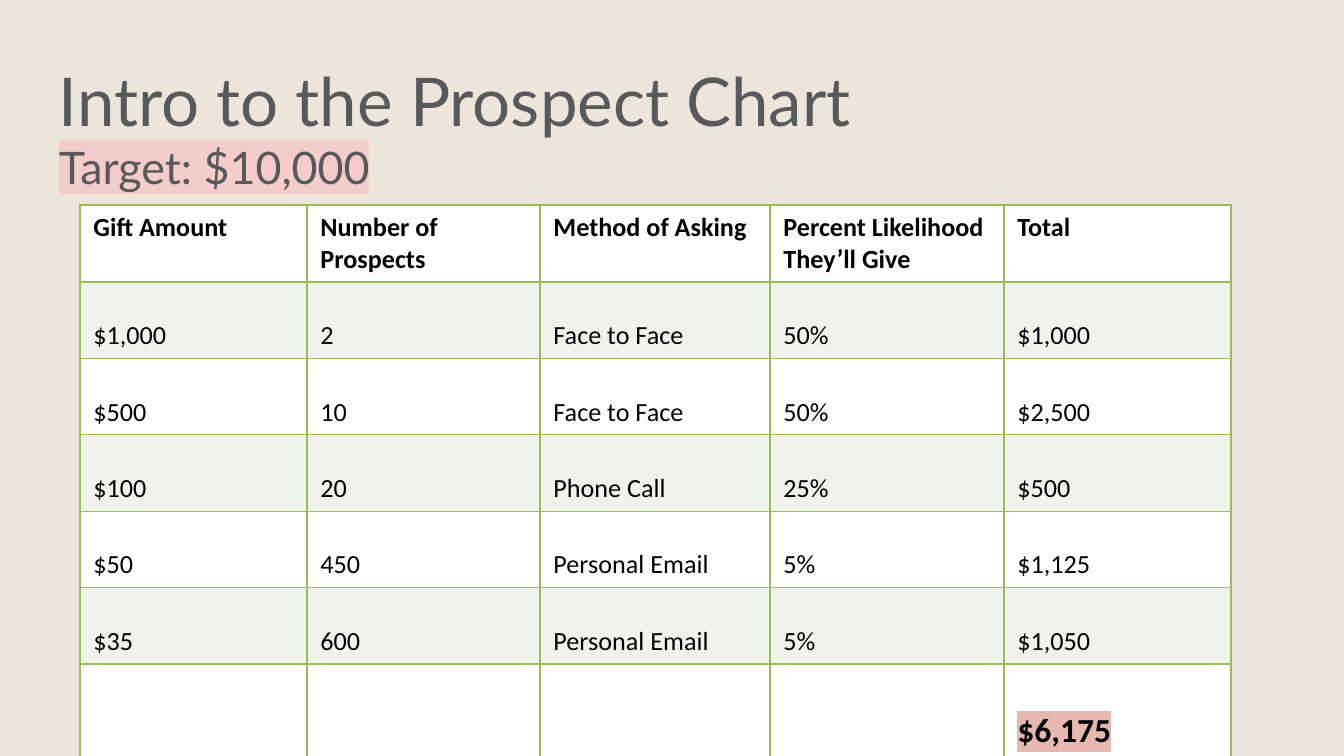
import pptx
import pptx.dml.color
import pptx.enum.text
import pptx.oxml
import pptx.oxml.ns
import pptx.util

TITLE = [
    ("Intro to the Prospect Chart", dict(size=36)),
    ("Target: $10,000", dict(size=24, highlight="F4CCCC")),
]
HEADER = ["Gift Amount", "Number of Prospects", "Method of Asking",
          "Percent Likelihood They’ll Give", "Total"]
GIFTS = [
    ["$1,000", "2", "Face to Face", "50%", "$1,000"],
    ["$500", "10", "Face to Face", "50%", "$2,500"],
    ["$100", "20", "Phone Call", "25%", "$500"],
    ["$50", "450", "Personal Email", "5%", "$1,125"],
    ["$35", "600", "Personal Email", "5%", "$1,050"],
]
GRAND_TOTAL = ["", "", "", "", "$6,175"]
COLUMNS = [227, 233, 230, 234, 227]
ROW_HEIGHT = 70
GREEN, WHITE, BAND = "9BBB59", "FFFFFF", "EFF3EA"


def px(n):
    return round(n * 914400 / 134.4)


def rgb(value):
    return pptx.dml.color.RGBColor.from_string(value)


def element(xml):
    return pptx.oxml.parse_xml(xml.replace(">", f" {pptx.oxml.ns.nsdecls('a')}>", 1))


def write(p, text, size=14, font="Calibri", color="000000", bold=False,
          highlight=None, spacing=None):
    p.alignment = pptx.enum.text.PP_ALIGN.LEFT
    if spacing:
        p.line_spacing = spacing
    r = p.add_run()
    r.text = text
    r.font.size = pptx.util.Pt(size)
    r.font.name = font
    r.font.bold = bold
    r.font.color.rgb = rgb(color)
    if highlight:
        fill = r.font._element.find(pptx.oxml.ns.qn("a:solidFill"))
        fill.addnext(element(
            f'<a:highlight><a:srgbClr val="{highlight}"/></a:highlight>'))


def set_borders(cell, top, bottom):
    """Draw the four sides; top and bottom are widths in points."""
    tcPr = cell._tc.get_or_add_tcPr()
    sides = [("L", 0.75), ("R", 0.75), ("T", top), ("B", bottom)]
    for i, (side, width) in enumerate(sides):
        tcPr.insert(i, element(
            f'<a:ln{side} w="{pptx.util.Pt(width)}"><a:solidFill>'
            f'<a:srgbClr val="{GREEN}"/></a:solidFill></a:ln{side}>'))


prs = pptx.Presentation()
prs.slide_width, prs.slide_height = px(1344), px(756)
s = prs.slides.add_slide(prs.slide_layouts[5])
s.background.fill.solid()
s.background.fill.fore_color.rgb = rgb("EBE5DB")

title = s.shapes.title
title.left, title.top, title.width, title.height = px(46), px(46), px(1253), px(85)
tf = title.text_frame
tf.word_wrap = True
tf.auto_size = pptx.enum.text.MSO_AUTO_SIZE.NONE
tf.vertical_anchor = pptx.enum.text.MSO_ANCHOR.TOP
tf.margin_left = tf.margin_right = tf.margin_top = tf.margin_bottom = px(13)
for i, (text, style) in enumerate(TITLE):
    p = tf.add_paragraph() if i else tf.paragraphs[0]
    write(p, text, font="Lato", color="595959", **style)

rows = [HEADER, *GIFTS, GRAND_TOTAL]
table = s.shapes.add_table(len(rows), len(COLUMNS), px(80), px(205),
                           px(sum(COLUMNS)), px(ROW_HEIGHT * len(rows))).table
for column, width in zip(table.columns, COLUMNS):
    column.width = px(width)
for i, row in enumerate(rows):
    table.rows[i].height = px(ROW_HEIGHT)
    if i == 0:
        style = dict(bold=True)
    elif row is GRAND_TOTAL:
        style = dict(size=18, bold=True, highlight="E6B8AF", spacing=1.98)
    else:
        style = dict(spacing=1.98)
    for j, text in enumerate(row):
        cell = table.cell(i, j)
        cell.fill.solid()
        cell.fill.fore_color.rgb = rgb(BAND if i % 2 else WHITE)
        set_borders(cell, top=1.5 if i == 1 else 0.75, bottom=1.5 if i == 0 else 0.75)
        if text:
            write(cell.text_frame.paragraphs[0], text, **style)

prs.save("out.pptx")
